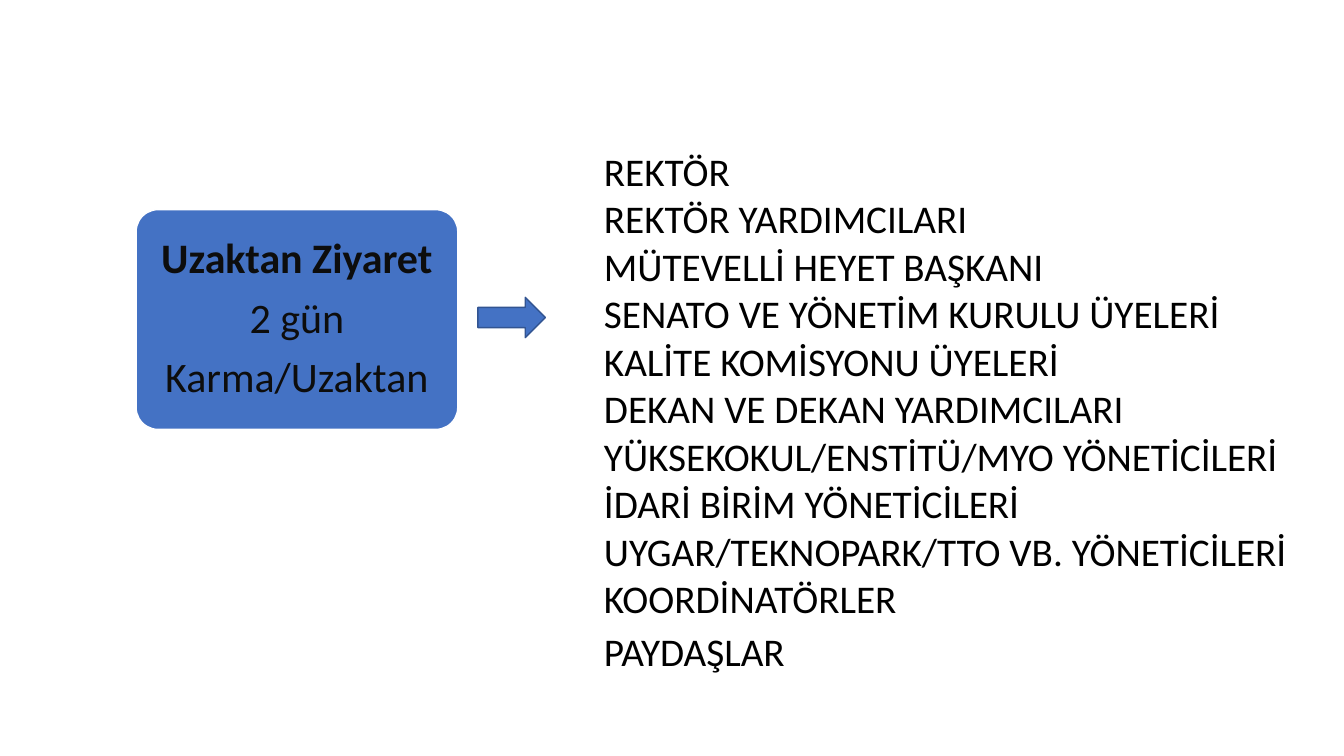
import pptx
import pptx.dml.color
import pptx.enum.shapes
import pptx.enum.text
import pptx.util
from lxml import etree
from pptx.util import Inches, Pt

COLORS = {
    "blue": "4472C4",
    "dark_blue": "325491",
    "white": "FFFFFF",
    "box_text": "0D0D0D",
    "black": "000000",
}
FONT = "Calibri"
VISIT_LINES = ["Uzaktan Ziyaret", "2 gün", "Karma/Uzaktan"]
PARTICIPANTS = [
    "REKTÖR",
    "REKTÖR YARDIMCILARI",
    "MÜTEVELLİ HEYET BAŞKANI",
    "SENATO VE YÖNETİM KURULU ÜYELERİ",
    "KALİTE KOMİSYONU ÜYELERİ",
    "DEKAN VE DEKAN YARDIMCILARI",
    "YÜKSEKOKUL/ENSTİTÜ/MYO YÖNETİCİLERİ",
    "İDARİ BİRİM YÖNETİCİLERİ",
    "UYGAR/TEKNOPARK/TTO VB. YÖNETİCİLERİ",
    "KOORDİNATÖRLER",
    "PAYDAŞLAR",
]


def rgb(name):
    return pptx.dml.color.RGBColor.from_string(COLORS[name])


def write_lines(text_frame, lines, size, color, alignment, space_after):
    text_frame.text = "\n".join(lines)
    text_frame.word_wrap = True
    for paragraph in text_frame.paragraphs:
        paragraph.alignment = alignment
        paragraph.line_spacing = 0.9
        paragraph.space_before = Pt(0)
        paragraph.space_after = Pt(space_after)
        paragraph.font.name = FONT
        paragraph.font.size = Pt(size)
        paragraph.font.color.rgb = rgb(color)


def add_filled_shape(slide, kind, left, top, width, height, line_color):
    shape = slide.shapes.add_shape(
        kind, Inches(left), Inches(top), Inches(width), Inches(height)
    )
    shape.shadow.inherit = False
    shape.fill.solid()
    shape.fill.fore_color.rgb = rgb("blue")
    shape.line.color.rgb = rgb(line_color)
    shape.line.width = Pt(1)
    return shape


def add_visit_box(slide):
    box = add_filled_shape(
        slide, pptx.enum.shapes.MSO_SHAPE.ROUNDED_RECTANGLE,
        1.35, 2.08, 3.19, 2.18, "white",
    )
    box.adjustments[0] = 0.1
    text_frame = box.text_frame
    text_frame.margin_left = text_frame.margin_right = Inches(0.12)
    text_frame.margin_top = text_frame.margin_bottom = Inches(0.12)
    text_frame.vertical_anchor = pptx.enum.text.MSO_ANCHOR.MIDDLE
    write_lines(text_frame, VISIT_LINES, 30, "box_text",
                pptx.enum.text.PP_ALIGN.CENTER, 9.9)
    text_frame.paragraphs[0].font.bold = True


def remove_bullet(paragraph):
    properties = paragraph._p.get_or_add_pPr()
    properties.set("marL", "0")
    properties.set("indent", "0")
    etree.SubElement(properties, pptx.oxml.ns.qn("a:buNone"))
    run_defaults = properties.find(pptx.oxml.ns.qn("a:defRPr"))
    properties.append(run_defaults)


def fill_participants(body):
    body.left, body.top = Inches(5.89), Inches(1.46)
    body.width, body.height = Inches(7.45), Inches(5.52)
    text_frame = body.text_frame
    text_frame.auto_size = pptx.enum.text.MSO_AUTO_SIZE.NONE
    text_frame.vertical_anchor = pptx.enum.text.MSO_ANCHOR.TOP
    write_lines(text_frame, PARTICIPANTS, 28, "black",
                pptx.enum.text.PP_ALIGN.LEFT, 3.7)
    for paragraph in text_frame.paragraphs:
        remove_bullet(paragraph)
    text_frame.paragraphs[-1].line_spacing = 1.0


def main():
    presentation = pptx.Presentation()
    presentation.slide_width = Inches(13.33)
    presentation.slide_height = Inches(7.5)
    slide = presentation.slides.add_slide(presentation.slide_layouts[1])
    title = slide.shapes.title.element
    title.getparent().remove(title)

    fill_participants(slide.placeholders[1])
    add_visit_box(slide)
    add_filled_shape(
        slide, pptx.enum.shapes.MSO_SHAPE.RIGHT_ARROW,
        4.74, 2.95, 0.67, 0.4, "dark_blue",
    )
    presentation.save("out.pptx")


if __name__ == "__main__":
    main()
